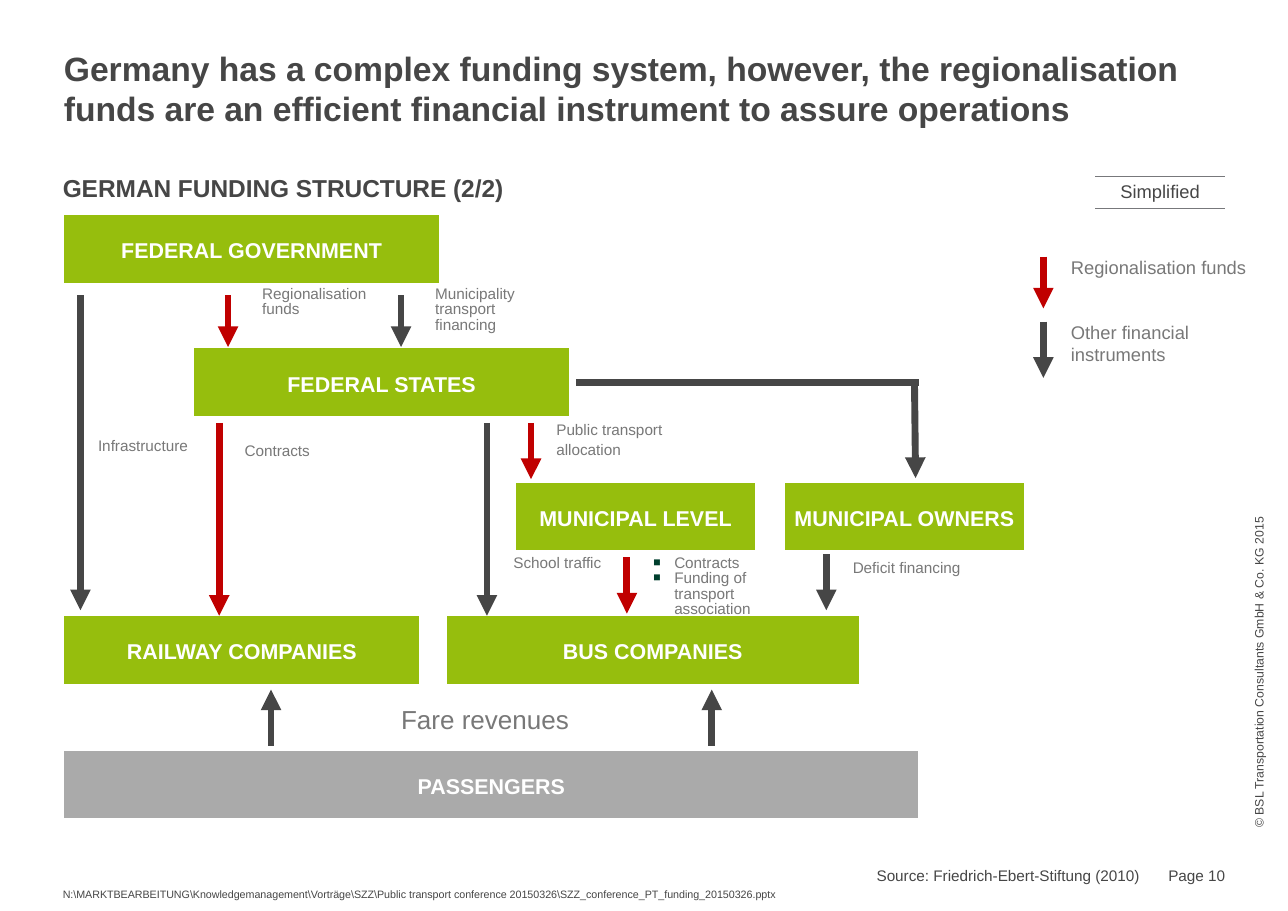
import pptx
import pptx.dml.color
import pptx.enum.shapes
import pptx.enum.text
import pptx.oxml
import pptx.oxml.ns
import pptx.presentation
import pptx.shapes.autoshape
import pptx.slide
import pptx.text.text
import pptx.util
from dataclasses import dataclass
from lxml import etree

Align = pptx.enum.text.PP_ALIGN
Anchor = pptx.enum.text.MSO_ANCHOR
qn = pptx.oxml.ns.qn
SCALE = 9144


@dataclass(frozen=True)
class Theme:
    face: str = "Arial"
    ink: str = "464646"
    soft: str = "787878"
    rule: str = "77787B"
    green: str = "96BE0D"
    grey: str = "AAAAAA"
    red: str = "C00000"
    mark: str = "003F2D"
    white: str = "FFFFFF"
    title: int = 22
    fare: int = 17
    head: int = 16
    box: int = 14
    key: int = 12
    label: int = 10
    copy: int = 8
    file: int = 7
    arrow: float = 4.5
    edge: int = 2


LOOK = Theme()
TIGHT = pptx.util.Pt(10)


@dataclass(frozen=True)
class Style:
    size: int
    tone: str
    bold: bool = False
    align: Align = Align.LEFT
    anchor: Anchor = Anchor.TOP
    pad: int = 0
    space: float = 1.0
    bullet: bool = False


@dataclass(frozen=True)
class Label:
    left: int
    top: int
    width: int
    height: int
    text: str
    style: Style
    turn: int = 0


@dataclass(frozen=True)
class Box:
    left: int
    row: int
    width: int
    text: str
    fill: str = LOOK.green


@dataclass(frozen=True)
class Arrow:
    x: int
    y: int
    end_x: int
    end_y: int
    tone: str = LOOK.ink
    head: bool = True


TITLE = Style(LOOK.title, LOOK.ink, True)
HEAD = Style(LOOK.head, LOOK.ink, True, anchor=Anchor.BOTTOM)
NAME = Style(LOOK.box, LOOK.white, True, Align.CENTER, Anchor.MIDDLE, space=1.1)
LOOSE = Style(LOOK.label, LOOK.soft, pad=5, space=1.1)
CLOSE = Style(LOOK.label, LOOK.soft, pad=5, space=TIGHT)
LIST = Style(LOOK.label, LOOK.soft, pad=5, space=TIGHT, bullet=True)
FARE = Style(LOOK.fare, LOOK.soft)
KEY = Style(LOOK.key, LOOK.soft)
TAG = Style(LOOK.key, LOOK.ink, align=Align.CENTER, anchor=Anchor.MIDDLE)
SOURCE = Style(LOOK.label, LOOK.ink, align=Align.RIGHT, anchor=Anchor.BOTTOM)
PAGE = Style(LOOK.label, LOOK.ink, align=Align.RIGHT, space=1.1)
COPY = Style(LOOK.copy, LOOK.ink, space=1.1)
FILE = Style(LOOK.file, LOOK.ink, pad=5, space=1.1)

HEADING = Label(
    58, 43, 1054, 102,
    "Germany has a complex funding system, however, the regionalisation "
    "funds are an efficient financial instrument to assure operations", TITLE)

LABELS = [
    Label(57, 153, 1055, 31, "GERMAN FUNDING STRUCTURE (2/2)", HEAD),
    Label(238, 256, 103, 67, "Regionalisation funds", CLOSE),
    Label(395, 256, 87, 67, "Municipality transport financing", CLOSE),
    Label(89, 394, 150, 67, "Infrastructure", CLOSE),
    Label(222, 394, 150, 67, "Contracts", LOOSE),
    Label(505, 375, 150, 67, "Public transport allocation", LOOSE),
    Label(466, 500, 88, 67, "School traffic", CLOSE),
    Label(593, 500, 134, 67, "Contracts\nFunding of transport association", LIST),
    Label(774, 500, 150, 67, "Deficit financing", LOOSE),
    Label(364, 639, 170, 29, "Fare revenues", FARE),
    Label(972, 233, 180, 20, "Regionalisation funds", KEY),
    Label(972, 292, 160, 40, "Other financial instruments", KEY),
    Label(443, 768, 591, 35, "Source: Friedrich-Ebert-Stiftung (2010)", SOURCE),
    Label(1026, 785, 86, 21, "Page 10", PAGE),
    Label(999, 601, 286, 15,
          "© BSL Transportation Consultants GmbH & Co. KG 2015", COPY, 270),
    Label(57, 800, 690, 24,
          "N:\\MARKTBEARBEITUNG\\Knowledgemanagement\\Vorträge\\SZZ\\Public transport "
          "conference 20150326\\SZZ_conference_PT_funding_20150326.pptx", FILE),
]

BOXES = [
    Box(57, 0, 343, "FEDERAL GOVERNMENT"),
    Box(175, 1, 343, "FEDERAL STATES"),
    Box(467, 2, 220, "MUNICIPAL LEVEL"),
    Box(711, 2, 220, "MUNICIPAL OWNERS"),
    Box(57, 3, 325, "RAILWAY COMPANIES"),
    Box(404, 3, 377, "BUS COMPANIES"),
    Box(57, 4, 778, "PASSENGERS", LOOK.grey),
]

ARROWS = [
    Arrow(73, 268, 73, 554),
    Arrow(207, 268, 207, 315, LOOK.red),
    Arrow(364, 268, 364, 315),
    Arrow(199, 384, 199, 559, LOOK.red),
    Arrow(442, 384, 442, 559),
    Arrow(482, 384, 482, 435, LOOK.red),
    Arrow(830, 347, 831, 434),
    Arrow(523, 347, 834, 347, head=False),
    Arrow(569, 506, 569, 557, LOOK.red),
    Arrow(750, 503, 750, 554),
    Arrow(246, 677, 246, 626),
    Arrow(646, 677, 646, 626),
    Arrow(947, 233, 947, 280, LOOK.red),
    Arrow(947, 292, 947, 343),
]


def px(*nums: int) -> list[pptx.util.Emu]:
    return [pptx.util.Emu(num * SCALE) for num in nums]


def rgb(tone: str) -> pptx.dml.color.RGBColor:
    return pptx.dml.color.RGBColor.from_string(tone)


def add_mark(line: pptx.text.text._Paragraph) -> None:
    props = line._p.get_or_add_pPr()
    props.set("marL", str(19 * SCALE))
    props.set("indent", str(-19 * SCALE))
    tint = etree.SubElement(props, qn("a:buClr"))
    etree.SubElement(tint, qn("a:srgbClr"), val=LOOK.mark)
    etree.SubElement(props, qn("a:buSzPct"), val="80000")
    etree.SubElement(props, qn("a:buFont"), typeface=LOOK.face)
    etree.SubElement(props, qn("a:buChar"), char="■")


def write(frame: pptx.text.text.TextFrame, text: str, style: Style) -> None:
    frame.text = text
    for line in frame.paragraphs:
        if style.bullet:
            add_mark(line)
        line.alignment = style.align
        line.line_spacing = style.space
        font = line.font
        font.name = LOOK.face
        font.size = pptx.util.Pt(style.size)
        font.bold = style.bold
        font.color.rgb = rgb(style.tone)


def fit(frame: pptx.text.text.TextFrame, style: Style) -> None:
    frame.word_wrap = True
    frame.auto_size = pptx.enum.text.MSO_AUTO_SIZE.NONE
    frame.vertical_anchor = style.anchor
    frame.margin_left = frame.margin_right = 0
    frame.margin_top, frame.margin_bottom = px(style.pad, style.pad)


def add_title(slide: pptx.slide.Slide, label: Label) -> None:
    shape = slide.shapes.title
    shape.left, shape.top, shape.width, shape.height = px(
        label.left, label.top, label.width, label.height)
    fit(shape.text_frame, label.style)
    write(shape.text_frame, label.text, label.style)


def add_label(slide: pptx.slide.Slide, label: Label) -> None:
    shape = slide.shapes.add_textbox(
        *px(label.left, label.top, label.width, label.height))
    shape.rotation = label.turn
    fit(shape.text_frame, label.style)
    write(shape.text_frame, label.text, label.style)


def add_box(slide: pptx.slide.Slide, box: Box) -> None:
    top = 194 + 243 * box.row // 2
    shape = slide.shapes.add_shape(
        pptx.enum.shapes.MSO_SHAPE.RECTANGLE, *px(box.left, top, box.width, 64))
    shape.shadow.inherit = False
    shape.fill.solid()
    shape.fill.fore_color.rgb = rgb(box.fill)
    shape.line.color.rgb = rgb(LOOK.white)
    shape.line.width = pptx.util.Pt(LOOK.edge)
    fit(shape.text_frame, NAME)
    write(shape.text_frame, box.text, NAME)


def add_arrow(slide: pptx.slide.Slide, arrow: Arrow) -> None:
    shape = slide.shapes.add_connector(
        pptx.enum.shapes.MSO_CONNECTOR.STRAIGHT,
        *px(arrow.x, arrow.y, arrow.end_x, arrow.end_y))
    shape.line.color.rgb = rgb(arrow.tone)
    shape.line.width = pptx.util.Pt(LOOK.arrow)
    if arrow.head:
        etree.SubElement(shape.line._get_or_add_ln(), qn("a:tailEnd"), type="triangle")
    etree.SubElement(shape._element.spPr, qn("a:effectLst"))


def add_tag(slide: pptx.slide.Slide) -> None:
    table = slide.shapes.add_table(1, 1, *px(994, 160, 118, 29)).table
    table.first_row = table.horz_banding = False
    cell = table.cell(0, 0)
    cell.margin_left = cell.margin_right = 0
    cell.margin_top, cell.margin_bottom = px(1, 1)
    cell.vertical_anchor = TAG.anchor
    props = cell._tc.get_or_add_tcPr()
    for side in "LRTB":
        edge = etree.SubElement(props, qn(f"a:ln{side}"), w="12700")
        if side in "TB":
            fill = etree.SubElement(edge, qn("a:solidFill"))
            etree.SubElement(fill, qn("a:srgbClr"), val=LOOK.rule)
        else:
            etree.SubElement(edge, qn("a:noFill"))
    cell.fill.background()
    write(cell.text_frame, "Simplified", TAG)


def main() -> None:
    deck = pptx.Presentation()
    deck.slide_width, deck.slide_height = px(1169, 827)
    slide = deck.slides.add_slide(deck.slide_layouts[5])
    add_title(slide, HEADING)
    for box in BOXES:
        add_box(slide, box)
    for arrow in ARROWS:
        add_arrow(slide, arrow)
    for label in LABELS:
        add_label(slide, label)
    add_tag(slide)
    deck.save("out.pptx")


if __name__ == "__main__":
    main()
